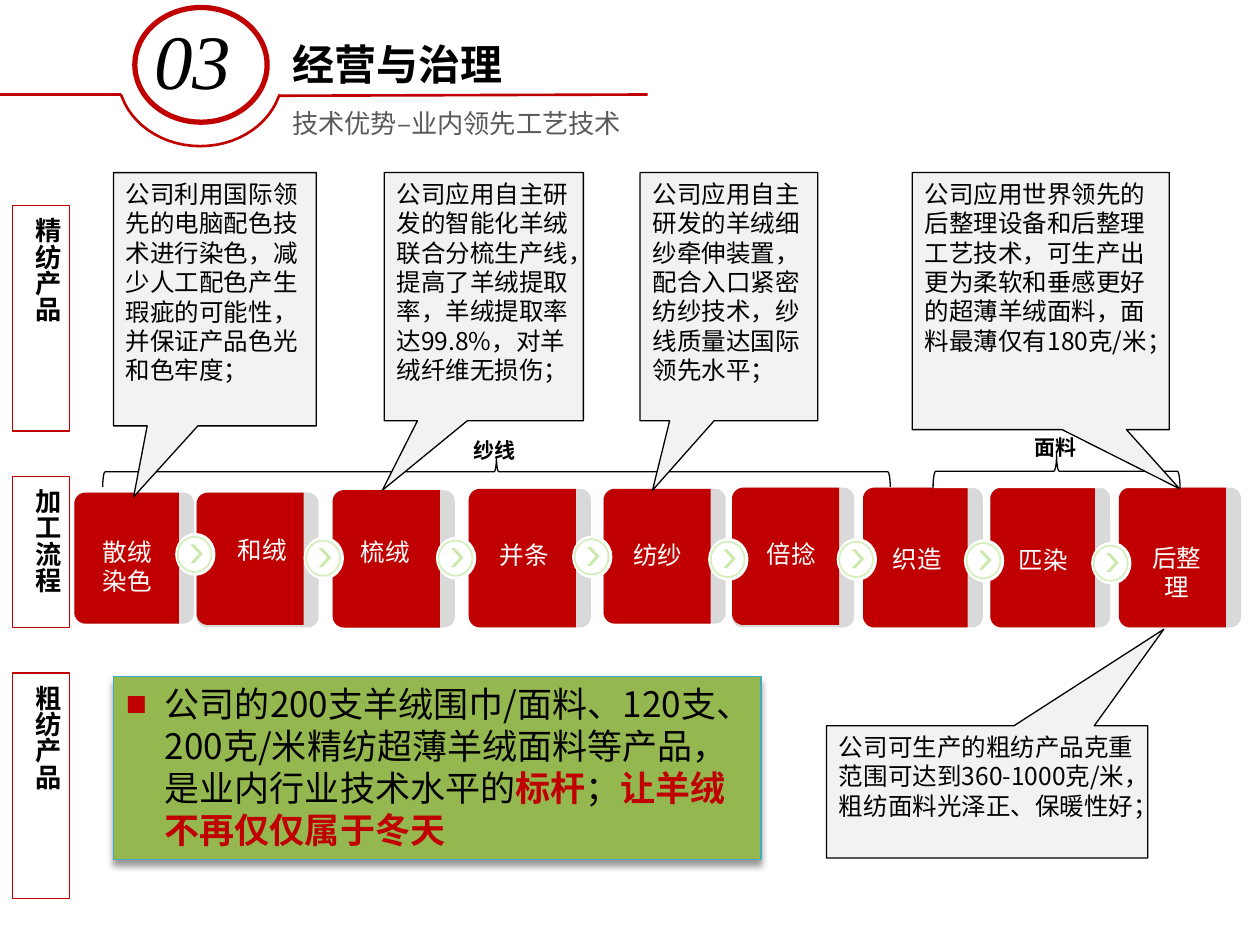
from math import cos, sin, pi
from pptx import Presentation
from pptx.dml.color import RGBColor
from pptx.enum.shapes import MSO_CONNECTOR, MSO_SHAPE
from pptx.enum.text import MSO_ANCHOR, PP_ALIGN
from pptx.oxml import parse_xml
from pptx.oxml.ns import nsdecls, qn
from pptx.util import Inches, Pt
from lxml.etree import SubElement

HUES = {"red": "C00000", "black": "000000", "white": "FFFFFF", "grey": "D9D9D9",
        "pale": "F2F2F2", "ring": "D6EDBD", "mint": "CCE9AD", "green": "95B74F",
        "teal": "46AAC5", "dim": "595959"}
SANS = "Noto Sans CJK SC"
SERIF = "Times New Roman"


class Deck:
    """Hold the style and the current slide, and draw each kind of element."""

    def __init__(self):
        self.show = Presentation()
        self.show.slide_width, self.show.slide_height = Inches(10), Inches(7.5)
        self.slide = self.show.slides.add_slide(self.show.slide_layouts[6])
        self.shapes = self.slide.shapes

    def hue(self, name):
        return RGBColor.from_string(HUES[name])

    def paint(self, shape, fill, line, width):
        shape.shadow.inherit = False
        if fill:
            shape.fill.solid()
            shape.fill.fore_color.rgb = self.hue(fill)
        else:
            shape.fill.background()
        if line:
            shape.line.color.rgb = self.hue(line)
            shape.line.width = Pt(width)
        else:
            shape.line.fill.background()
        return shape

    def shape(self, kind, box, fill=None, line=None, width=0.75, adj=()):
        shape = self.shapes.add_shape(kind, *map(Inches, box))
        for i, value in enumerate(adj):
            shape.adjustments[i] = value
        return self.paint(shape, fill, line, width)

    def free(self, points, fill=None, line=None, width=0.75, close=True):
        spots = [(Inches(x), Inches(y)) for x, y in points]
        pen = self.shapes.build_freeform(*spots[0])
        pen.add_line_segments(spots[1:], close=close)
        return self.paint(pen.convert_to_shape(), fill, line, width)

    def line(self, start, end):
        rule = self.shapes.add_connector(MSO_CONNECTOR.STRAIGHT, *map(Inches, start + end))
        rule.line.color.rgb = self.hue("red")
        rule.line.width = Pt(1.5)
        SubElement(rule._element.spPr, qn("a:effectLst"))

    def run(self, para, text, size, hue="black", bold=False, font=SANS, slant=False):
        run = para.add_run()
        run.text = text
        face = run.font
        face.size, face.bold, face.italic, face.name = Pt(size), bold, slant, font
        face.color.rgb = self.hue(hue)
        SubElement(run._r.get_or_add_rPr(), qn("a:ea")).set("typeface", SANS)

    def words(self, shape, text, size, align=PP_ALIGN.LEFT, anchor=MSO_ANCHOR.TOP,
              wrap=True, space=None, **style):
        frame = shape.text_frame
        frame.word_wrap, frame.vertical_anchor = wrap, anchor
        for i, part in enumerate(text.split("\n")):
            para = frame.add_paragraph() if i else frame.paragraphs[0]
            para.alignment = align
            if space:
                para.line_spacing = space
            self.run(para, part, size, **style)
        return frame

    def label(self, box, text, size, **style):
        return self.words(self.shapes.add_textbox(*map(Inches, box)), text, size, **style)

    def card(self, x, y, wide, back, front, text, mid, top):
        self.shape(MSO_SHAPE.ROUNDED_RECTANGLE, (x, y, wide, back), "grey", adj=[0.09])
        r, right, base = 0.09, x + wide - 0.12, y + front
        turns = [i * pi / 16 for i in range(9)]
        low = [(x + r - r * sin(t), base - r + r * cos(t)) for t in turns]
        high = [(x + r - r * cos(t), y + r - r * sin(t)) for t in turns]
        self.free([(right, y), (right, base)] + low + high, "red")
        tall = 0.34 + 0.23 * text.count("\n")
        self.label((mid - 0.39, top, 0.78, tall), text, 14, align=PP_ALIGN.CENTER,
                   wrap=False, hue="white")

    def badge(self, x, y):
        self.shape(MSO_SHAPE.OVAL, (x, y, 0.32, 0.34), "white")
        self.shape(MSO_SHAPE.OVAL, (x + 0.02, y + 0.03, 0.27, 0.28), "white", "ring", 1)
        self.shape(MSO_SHAPE.CHEVRON, (x + 0.12, y + 0.09, 0.1, 0.15), "mint", adj=[0.69])

    def brace(self, box, name, place):
        shape = self.shape(MSO_SHAPE.LEFT_BRACE, box, "white", "black", adj=[0.08, 0.5])
        shape.rotation = 90
        self.label(place, name, 12, align=PP_ALIGN.CENTER, bold=True)

    def note(self, box, tip, text):
        shape = self.shape(MSO_SHAPE.RECTANGULAR_CALLOUT, box, "pale", "black", adj=tip)
        self.words(shape, text, 14)

    def side(self, y, tall, text):
        shape = self.shape(MSO_SHAPE.RECTANGLE, (0.1, y, 0.45, tall), None, "red")
        frame = self.words(shape, text, 15, bold=True)
        frame._txBody.bodyPr.set("vert", "eaVert")

    def claim(self, box, parts):
        shape = self.shape(MSO_SHAPE.RECTANGLE, box, "green", "teal")
        glow = shape._element.spPr.find(qn("a:effectLst"))
        glow.append(parse_xml(
            f'<a:outerShdw {nsdecls("a")} blurRad="{Pt(4)}" dist="{Pt(3)}" dir="5400000" '
            'rotWithShape="0"><a:srgbClr val="000000"><a:alpha val="40000"/></a:srgbClr>'
            '</a:outerShdw>'))
        frame = shape.text_frame
        frame.word_wrap, frame.vertical_anchor = True, MSO_ANCHOR.TOP
        para = frame.paragraphs[0]
        para.alignment = PP_ALIGN.LEFT
        props = para._p.get_or_add_pPr()
        props.set("marL", str(Inches(0.31)))
        props.set("indent", str(Inches(-0.31)))
        SubElement(SubElement(props, qn("a:buClr")), qn("a:srgbClr")).set("val", HUES["red"])
        SubElement(props, qn("a:buFont")).set("typeface", "Arial")
        SubElement(props, qn("a:buChar")).set("char", "■")
        for text, strong in parts:
            self.run(para, text, 20, "red" if strong else "black", strong)

    def header(self):
        ring = self.shape(MSO_SHAPE.OVAL, (1.07, 0.06, 1.05, 0.91), None, "red", 3)
        frame = self.words(ring, "03", 44, anchor=MSO_ANCHOR.MIDDLE, space=0.9,
                           font=SERIF, slant=True)
        frame.margin_left = frame.margin_right = frame.margin_top = frame.margin_bottom = 0
        self.line((2.22, 0.76), (5.14, 0.75))
        knots = [(2.19, 0.82), (2.09, 1.02), (1.86, 1.16), (1.59, 1.16)]
        half = [(2.22, 0.75)]
        for i in range(13):
            t = i / 12
            mix = [(1 - t) ** 3, 3 * t * (1 - t) ** 2, 3 * t * t * (1 - t), t ** 3]
            half.append(tuple(sum(m * k[a] for m, k in zip(mix, knots)) for a in (0, 1)))
        twin = [(3.18 - x, y) for x, y in half[-2::-1]]
        self.free(half + twin, None, "red", 1.5, close=False)
        self.line((0, 0.75), (0.96, 0.75))
        self.label((2.22, 0.3, 3.63, 0.46), "经营与治理", 24, anchor=MSO_ANCHOR.BOTTOM,
                   space=0.9, bold=True, font="Montserrat")
        self.label((2.22, 0.8, 3.16, 0.42), "技术优势–业内领先工艺技术", 15,
                   hue="dim", font=SERIF)


CARDS = [(0.59, 3.91, 0.95, 1.04, 1.04, "散绒\n染色", 1.01, 4.21),
         (1.56, 3.91, 0.97, 1.07, 1.05, "和绒", 2.08, 4.2),
         (2.64, 3.89, 0.97, 1.09, 1.09, "梳绒", 3.06, 4.21),
         (3.72, 3.88, 0.97, 1.1, 1.1, "并条", 4.16, 4.24),
         (4.79, 3.88, 0.97, 1.07, 1.07, "纺纱", 5.22, 4.24),
         (5.81, 3.87, 0.97, 1.11, 1.09, "倍捻", 6.28, 4.23),
         (6.85, 3.87, 0.95, 1.11, 1.11, "织造", 7.28, 4.27),
         (7.86, 3.87, 0.95, 1.11, 1.11, "匹染", 8.28, 4.28),
         (8.88, 3.87, 0.97, 1.11, 1.11, "后整理", 9.34, 4.26)]
BADGES = [(1.39, 4.23), (2.41, 4.26), (3.46, 4.26), (4.54, 4.25),
          (5.62, 4.27), (6.64, 4.27), (7.65, 4.28), (8.66, 4.3)]
NOTES = [((0.9, 1.37, 1.61, 2.01), (-0.4, 0.78),
          "公司利用国际领先的电脑配色技术进行染色，减少人工配色产生瑕疵的可能性，并保证产品色光和色牢度；"),
         ((3.05, 1.37, 1.58, 1.97), (-0.51, 0.78),
          "公司应用自主研发的智能化羊绒联合分梳生产线，提高了羊绒提取率，羊绒提取率达99.8%，对羊绒纤维无损伤；"),
         ((5.08, 1.37, 1.41, 1.97), (-0.43, 0.78),
          "公司应用自主研发的羊绒细纱牵伸装置，配合入口紧密纺纱技术，纱线质量达国际领先水平；"),
         ((7.24, 1.37, 2.04, 2.04), (0.54, 0.73),
          "公司应用世界领先的后整理设备和后整理工艺技术，可生产出更为柔软和垂感更好的超薄羊绒面料，面料最薄仅有180克/米；"),
         ((6.56, 5.76, 2.55, 1.05), (0.55, -1.23),
          "公司可生产的粗纺产品克重范围可达到360-1000克/米，粗纺面料光泽正、保暖性好；")]
SIDES = [(1.63, 1.79, "精纺产品"), (3.78, 1.2, "加工流程"), (5.34, 1.79, "粗纺产品")]
CLAIM = [("公司的200支羊绒围巾/面料、120支、200克/米精纺超薄羊绒面料等产品，是业内行业技术水平的", False),
         ("标杆", True), ("；", False), ("让羊绒不再仅仅属于冬天", True)]


def main():
    deck = Deck()
    for card in CARDS:
        deck.card(*card)
    for badge in BADGES:
        deck.badge(*badge)
    deck.brace((3.82, 0.62, 0.24, 6.25), "纱线", (3.28, 3.42, 1.29, 0.3))
    deck.brace((8.25, 2.76, 0.27, 1.96), "面料", (7.24, 3.4, 2.28, 0.3))
    for note in NOTES:
        deck.note(*note)
    for side in SIDES:
        deck.side(*side)
    deck.claim((0.9, 5.37, 5.14, 1.45), CLAIM)
    deck.header()
    deck.show.save("out.pptx")


if __name__ == "__main__":
    main()
